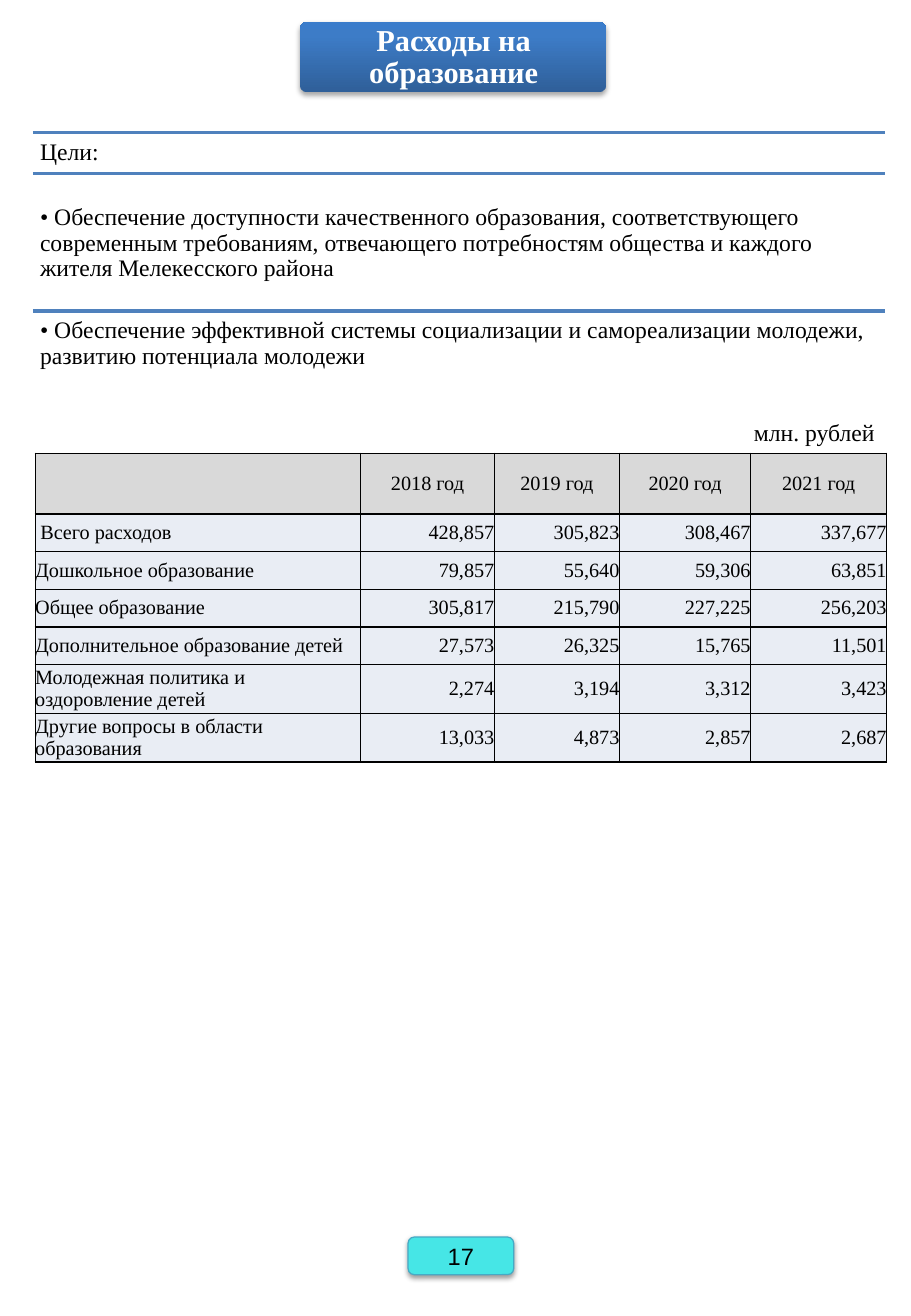
from copy import deepcopy

from lxml.etree import SubElement
from pptx import Presentation
from pptx.dml.color import RGBColor
from pptx.enum.shapes import MSO_CONNECTOR, MSO_SHAPE
from pptx.enum.text import MSO_ANCHOR, PP_ALIGN
from pptx.oxml.ns import qn
from pptx.util import Inches, Pt

BLACK = "000000"
WHITE = "FFFFFF"
RULE_BLUE = "4F81BD"
HEADER_GRAY = "D9D9D9"
BODY_BLUE = "E9EDF4"
TITLE_GRADIENT = [(0, "2F5F99"), (0.8, "3D7CC7"), (1, "3A7CCB")]

GOALS = [
    (1.09, 0.64, "Цели:"),
    (1.63, 0.83, "• Обеспечение доступности качественного образования, соответствующего "
                 "современным требованиям, отвечающего потребностям общества и каждого "
                 "жителя Мелекесского района"),
    (2.56, 0.69, "• Обеспечение эффективной системы социализации и самореализации "
                 "молодежи, развитию потенциала молодежи"),
]
RULE_TOPS = [1.09, 1.43, 2.56]

COLUMN_WIDTHS = [2.68, 1.1, 1.03, 1.08, 1.12]
ROW_HEIGHTS = [0.5] + [0.31] * 4 + [0.4] * 2
EXPENSES = [
    ["", "2018 год", "2019 год", "2020 год", "2021 год"],
    [" Всего расходов", "428,857", "305,823", "308,467", "337,677"],
    ["Дошкольное образование", "79,857", "55,640", "59,306", "63,851"],
    ["Общее образование", "305,817", "215,790", "227,225", "256,203"],
    ["Дополнительное образование детей", "27,573", "26,325", "15,765", "11,501"],
    ["Молодежная политика и оздоровление детей", "2,274", "3,194", "3,312", "3,423"],
    ["Другие вопросы в области образования", "13,033", "4,873", "2,857", "2,687"],
]


def color(value):
    return RGBColor.from_string(value)


def write_text(frame, text, size=14, font="Times New Roman", fill=BLACK, bold=False,
               align=PP_ALIGN.LEFT, spacing=None):
    frame.word_wrap = True
    paragraph = frame.paragraphs[0]
    paragraph.alignment = align
    if spacing:
        paragraph.line_spacing = spacing
    run = paragraph.add_run()
    run.text = text
    run.font.size = Pt(size)
    run.font.name = font
    run.font.bold = bold
    run.font.color.rgb = color(fill)


def set_margins(target, margin):
    for side in ("left", "top", "right", "bottom"):
        setattr(target, f"margin_{side}", Inches(margin))


class SlideBuilder:
    def __init__(self, presentation):
        self.slide = presentation.slides.add_slide(presentation.slide_layouts[6])

    def shape(self, kind, left, top, width, height):
        shape = self.slide.shapes.add_shape(
            kind, Inches(left), Inches(top), Inches(width), Inches(height))
        shape.shadow.inherit = False
        return shape

    def drop_shadow(self, shape, opacity, distance):
        effects = shape.element.spPr.find(qn("a:effectLst"))
        shadow = SubElement(effects, qn("a:outerShdw"), blurRad=str(Pt(3.1)),
                            dist=str(Pt(distance)), dir="5400000", rotWithShape="0")
        shadow_color = SubElement(shadow, qn("a:srgbClr"), val=BLACK)
        SubElement(shadow_color, qn("a:alpha"), val=str(opacity * 1000))

    def title_panel(self, left, top, width, height):
        panel = self.shape(MSO_SHAPE.ROUNDED_RECTANGLE, left, top, width, height)
        panel.adjustments[0] = 0.1
        panel.line.fill.background()
        panel.fill.gradient()
        panel.fill.gradient_angle = 90
        stop_list = panel.element.spPr.find(qn("a:gradFill")).find(qn("a:gsLst"))
        stop_list.append(deepcopy(stop_list[0]))
        for stop, (position, value) in zip(panel.fill.gradient_stops, TITLE_GRADIENT):
            stop.position = position
            stop.color.rgb = color(value)
        self.drop_shadow(panel, 35, 1.8)

    def page_badge(self, text, left, top, width, height):
        badge = self.shape(MSO_SHAPE.FLOWCHART_ALTERNATE_PROCESS, left, top, width, height)
        badge.fill.solid()
        badge.fill.fore_color.rgb = color("46E6E6")
        badge.line.color.rgb = color("46AAC5")
        badge.line.width = Pt(0.75)
        self.drop_shadow(badge, 38, 1.6)
        badge.text_frame.vertical_anchor = MSO_ANCHOR.MIDDLE
        write_text(badge.text_frame, text, font="Arial", align=PP_ALIGN.CENTER)

    def text(self, text, left, top, width, height, margin=None,
             anchor=MSO_ANCHOR.TOP, **text_format):
        box = self.slide.shapes.add_textbox(
            Inches(left), Inches(top), Inches(width), Inches(height))
        if margin is not None:
            set_margins(box.text_frame, margin)
        box.text_frame.vertical_anchor = anchor
        write_text(box.text_frame, text, **text_format)

    def rule(self, left, right, top):
        line = self.slide.shapes.add_connector(
            MSO_CONNECTOR.STRAIGHT, Inches(left), Inches(top), Inches(right), Inches(top))
        line.line.color.rgb = color(RULE_BLUE)
        line.line.width = Pt(2)
        SubElement(line.element.spPr, qn("a:effectLst"))

    def cell_borders(self, cell):
        properties = cell._tc.get_or_add_tcPr()
        for index, side in enumerate(("lnL", "lnR", "lnT", "lnB")):
            border = SubElement(properties, qn(f"a:{side}"), w=str(Pt(1)))
            properties.insert(index, border)
            fill = SubElement(border, qn("a:solidFill"))
            SubElement(fill, qn("a:srgbClr"), val=BLACK)

    def table(self, rows, left, top):
        table = self.slide.shapes.add_table(
            len(rows), len(COLUMN_WIDTHS), Inches(left), Inches(top),
            Inches(sum(COLUMN_WIDTHS)), Inches(sum(ROW_HEIGHTS))).table
        for column, width in zip(table.columns, COLUMN_WIDTHS):
            column.width = Inches(width)
        for row, height in zip(table.rows, ROW_HEIGHTS):
            row.height = Inches(height)
        for row_index, row in enumerate(rows):
            for column_index, text in enumerate(row):
                cell = table.cell(row_index, column_index)
                set_margins(cell, 0)
                cell.vertical_anchor = MSO_ANCHOR.MIDDLE
                cell.fill.solid()
                cell.fill.fore_color.rgb = color(BODY_BLUE if row_index else HEADER_GRAY)
                self.cell_borders(cell)
                if row_index == 0:
                    align = PP_ALIGN.CENTER
                else:
                    align = PP_ALIGN.RIGHT if column_index else PP_ALIGN.LEFT
                if text:
                    write_text(cell.text_frame, text, size=12, align=align)


def main():
    presentation = Presentation()
    presentation.slide_width = Inches(7.5)
    presentation.slide_height = Inches(10.83)
    builder = SlideBuilder(presentation)

    builder.title_panel(2.47, 0.18, 2.52, 0.58)
    builder.text("Расходы на образование", 2.5, 0.21, 2.47, 0.53, margin=0.07,
                 anchor=MSO_ANCHOR.MIDDLE, size=18, fill=WHITE, bold=True,
                 align=PP_ALIGN.CENTER, spacing=0.9)
    for top in RULE_TOPS:
        builder.rule(0.27, 7.29, top)
    for top, height, goal in GOALS:
        builder.text(goal, 0.27, top, 7.03, height, margin=0.06, spacing=0.9)
    builder.text("млн. рублей", 5.88, 3.39, 1.42, 0.34, align=PP_ALIGN.RIGHT)
    builder.table(EXPENSES, 0.29, 3.73)
    builder.page_badge("17", 3.36, 10.18, 0.87, 0.31)

    presentation.save("out.pptx")


if __name__ == "__main__":
    main()
